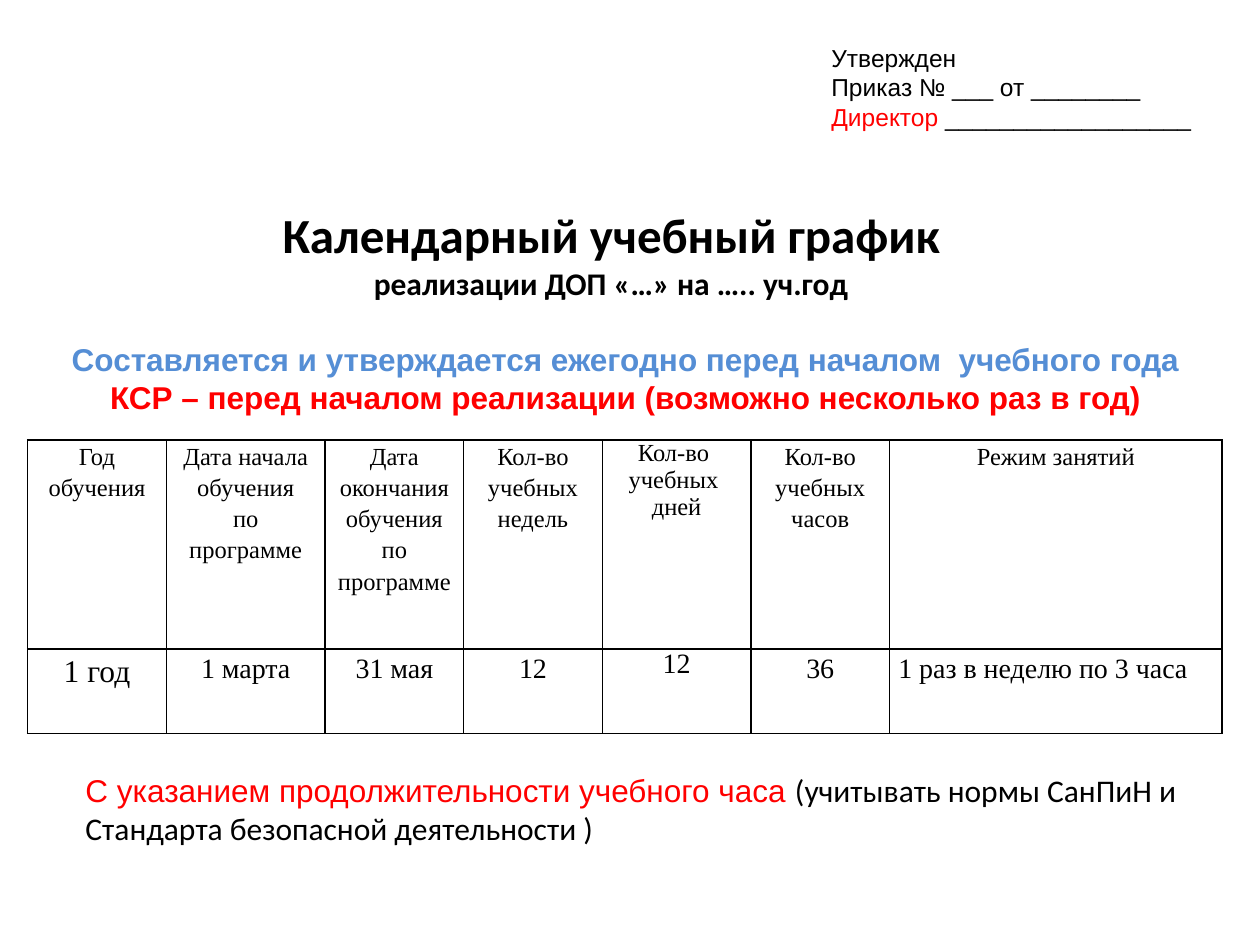
from lxml import etree
from pptx import Presentation, util as u
from pptx.dml.color import RGBColor
from pptx.enum import text
from pptx.oxml import ns

COLORS = {"black": "000000", "red": "FF0000", "blue": "558ED5"}
CENTER, LEFT = text.PP_ALIGN.CENTER, text.PP_ALIGN.LEFT
COLUMN_WIDTHS = [1.1, 1.26, 1.1, 1.1, 1.18, 1.1, 2.64]
ROW_HEIGHTS = [1.66, 0.67]
SINGLE_SPACED_COLUMN = 4
HEADERS = [
    ["Год обучения"],
    ["Дата начала обучения", "по программе"],
    ["Дата окончания обучения", "по программе"],
    ["Кол-во", "учебных недель"],
    ["Кол-во ", "учебных ", "дней"],
    ["Кол-во учебных часов"],
    ["Режим занятий"],
]
VALUES = ["1 год", "1 марта", "31 мая", "12", "12", "36", "1 раз в неделю по 3 часа"]


def set_values(target, values):
    """Set attributes of an object from a dict."""
    for name, value in values.items():
        setattr(target, name, value)


def add_run(paragraph, words, size, font="Arial", color="black", bold=False):
    """Add a formatted run to a paragraph."""
    run = paragraph.add_run()
    run.text = words
    set_values(run.font, {"size": u.Pt(size), "name": font, "bold": bold})
    run.font.color.rgb = RGBColor.from_string(COLORS[color])


def write_paragraphs(frame, paragraphs, **layout):
    """Fill a text frame with paragraphs given as lists of runs."""
    for index, runs in enumerate(paragraphs):
        paragraph = frame.add_paragraph() if index else frame.paragraphs[0]
        set_values(paragraph, layout)
        for run in runs:
            add_run(paragraph, **run)


def place(shape, left, top, width, height):
    """Position a shape by lengths in inches."""
    box = {"left": left, "top": top, "width": width, "height": height}
    set_values(shape, {name: u.Inches(value) for name, value in box.items()})


def add_title(slide):
    """Format the title placeholder and write its two lines."""
    title = slide.shapes.title
    place(title, 0.59, 1.59, 8.52, 0.84)
    frame = title.text_frame
    set_values(frame, {"vertical_anchor": text.MSO_ANCHOR.MIDDLE,
                       "auto_size": text.MSO_AUTO_SIZE.NONE})
    paragraph = frame.paragraphs[0]
    paragraph.alignment = CENTER
    add_run(paragraph, "Календарный учебный график", 28, "Calibri", bold=True)
    paragraph.add_line_break()
    add_run(paragraph, "реализации ДОП «…» на ….. уч.год", 18, "Calibri", bold=True)


def add_text(slide, box, paragraphs, alignment=LEFT, wrap=True):
    """Add a text box with formatted paragraphs."""
    frame = slide.shapes.add_textbox(*map(u.Inches, box)).text_frame
    set_values(frame, {"word_wrap": wrap,
                       "auto_size": text.MSO_AUTO_SIZE.SHAPE_TO_FIT_TEXT})
    write_paragraphs(frame, paragraphs, alignment=alignment)


def add_borders(cell):
    """Draw a thin black line on every side of a cell."""
    properties = cell._tc.get_or_add_tcPr()
    for side in ("lnL", "lnR", "lnT", "lnB"):
        line = etree.SubElement(properties, ns.qn(f"a:{side}"), w=str(u.Pt(1)))
        fill = etree.SubElement(line, ns.qn("a:solidFill"))
        etree.SubElement(fill, ns.qn("a:srgbClr"), val=COLORS["black"])


def fill_cell(cell, lines, size, alignment, spacing):
    """Format a table cell and write its lines."""
    set_values(cell, {"margin_left": u.Inches(0.07), "margin_right": u.Inches(0.07),
                      "margin_top": 0, "margin_bottom": 0})
    add_borders(cell)
    cell.fill.background()
    runs = [[{"words": line, "size": size, "font": "Times New Roman"}] for line in lines]
    write_paragraphs(cell.text_frame, runs, alignment=alignment, line_spacing=spacing)


def add_schedule(slide):
    """Add the table of study periods."""
    box = map(u.Inches, (0.22, 3.49, sum(COLUMN_WIDTHS), sum(ROW_HEIGHTS)))
    table = slide.shapes.add_table(len(ROW_HEIGHTS), len(COLUMN_WIDTHS), *box).table
    set_values(table, {"first_row": False, "horz_banding": False})
    for row, height in zip(table.rows, ROW_HEIGHTS):
        row.height = u.Inches(height)
    last = len(COLUMN_WIDTHS) - 1
    for index, width in enumerate(COLUMN_WIDTHS):
        table.columns[index].width = u.Inches(width)
        spacing = 1.0 if index == SINGLE_SPACED_COLUMN else 1.15
        fill_cell(table.cell(0, index), HEADERS[index], 14, CENTER, spacing)
        fill_cell(table.cell(1, index), [VALUES[index]], 16 if index else 18,
                  LEFT if index == last else CENTER, spacing)


def main():
    """Build and save the slide."""
    presentation = Presentation()
    set_values(presentation, {"slide_width": u.Inches(10), "slide_height": u.Inches(7.5)})
    slide = presentation.slides.add_slide(presentation.slide_layouts[5])
    add_title(slide)
    add_schedule(slide)
    add_text(slide, (0.58, 6.07, 9.01, 1.01), [
        [{"words": "С указанием продолжительности учебного часа ", "size": 18, "color": "red"},
         {"words": "(учитывать нормы СанПиН и", "size": 18, "font": "Calibri"}],
        [{"words": "Стандарта безопасной деятельности )", "size": 18, "font": "Calibri"}],
    ], wrap=False)
    add_text(slide, (0.27, 2.65, 9.39, 0.71), [[
        {"words": "Составляется и утверждается ежегодно перед началом  учебного года ",
         "size": 18, "color": "blue", "bold": True},
        {"words": "КСР – перед началом реализации (возможно несколько раз в год)",
         "size": 18, "color": "red", "bold": True},
    ]], CENTER)
    add_text(slide, (6.5, 0.29, 3.21, 0.81), [
        [{"words": "Утвержден", "size": 14}],
        [{"words": "Приказ № ___ от ________", "size": 14}],
        [{"words": "Директор", "size": 14, "color": "red"},
         {"words": " __________________", "size": 14}],
    ])
    presentation.save("out.pptx")


if __name__ == "__main__":
    main()
